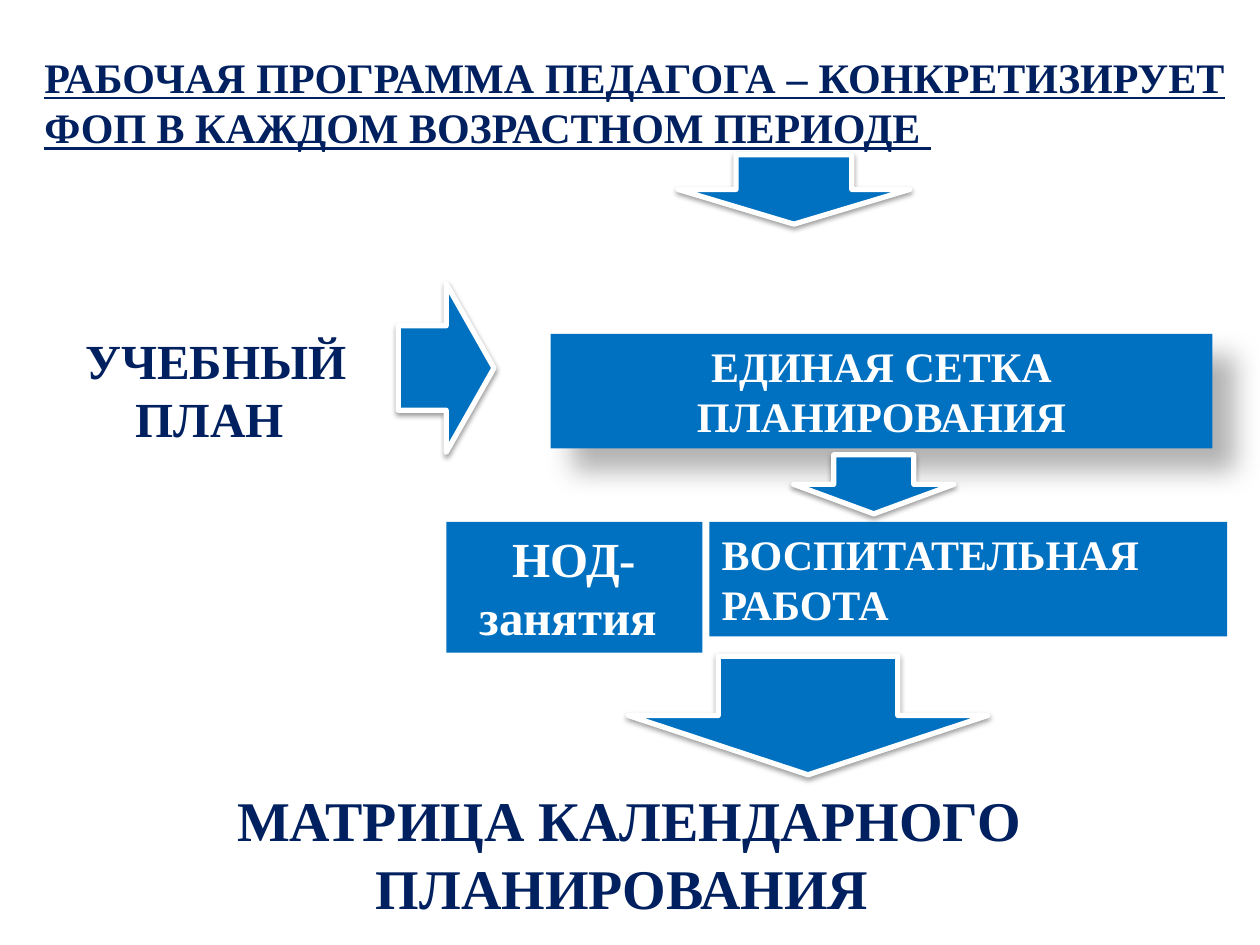
from lxml import etree
from pptx import Presentation
from pptx.dml.color import RGBColor
from pptx.enum.shapes import MSO_SHAPE
from pptx.enum.text import MSO_ANCHOR, MSO_AUTO_SIZE, PP_ALIGN
from pptx.oxml.ns import qn
from pptx.util import Cm, Pt

RECTANGLE = MSO_SHAPE.RECTANGLE
RIGHT_ARROW = MSO_SHAPE.RIGHT_ARROW
DOWN_ARROW = MSO_SHAPE.DOWN_ARROW
LEFT = PP_ALIGN.LEFT
CENTER = PP_ALIGN.CENTER
JUSTIFY = PP_ALIGN.JUSTIFY
TOP = MSO_ANCHOR.TOP
NO_AUTOFIT = MSO_AUTO_SIZE.NONE
TITLE_ONLY = 5

COLORS = {"navy": "002060", "blue": "0070C0", "white": "FFFFFF", "black": "000000"}
ARROW_SHADOW = {"alpha": 38, "blur": 3.1, "distance": 1.6, "angle": 90}
BOX_SHADOW = {"alpha": 30, "blur": 15, "distance": 18, "angle": 45}


class PlanSlide:
    font_name = "Times New Roman"
    arrow_line = Pt(3)

    def __init__(self, presentation):
        self.slide = presentation.slides.add_slide(presentation.slide_layouts[TITLE_ONLY])

    def color(self, name):
        return RGBColor.from_string(COLORS[name])

    def add_text(self, shape, text, size, color, alignment, underline=False):
        frame = shape.text_frame
        frame.word_wrap = True
        frame.auto_size = NO_AUTOFIT
        frame.vertical_anchor = TOP
        paragraph = frame.paragraphs[0]
        paragraph.alignment = alignment
        run = paragraph.add_run()
        run.text = text
        run.font.name = self.font_name
        run.font.size = Pt(size)
        run.font.bold = True
        run.font.underline = underline
        run.font.color.rgb = self.color(color)

    def title(self, bounds, text, size):
        shape = self.slide.shapes.title
        shape.left, shape.top, shape.width, shape.height = map(Cm, bounds)
        self.add_text(shape, text, size, "navy", JUSTIFY, underline=True)

    def label(self, bounds, text, size):
        shape = self.slide.shapes.add_textbox(*map(Cm, bounds))
        self.add_text(shape, text, size, "navy", CENTER)

    def filled_shape(self, kind, bounds):
        shape = self.slide.shapes.add_shape(kind, *map(Cm, bounds))
        shape.shadow.inherit = False
        shape.fill.solid()
        shape.fill.fore_color.rgb = self.color("blue")
        return shape

    def box(self, bounds, text, size, alignment=CENTER, shadow=None):
        shape = self.filled_shape(RECTANGLE, bounds)
        shape.line.fill.background()
        self.add_text(shape, text, size, "white", alignment)
        if shadow:
            self.cast_shadow(shape, **shadow)

    def arrow(self, kind, bounds):
        shape = self.filled_shape(kind, bounds)
        shape.line.color.rgb = self.color("white")
        shape.line.width = self.arrow_line
        self.cast_shadow(shape, **ARROW_SHADOW)

    def cast_shadow(self, shape, alpha, blur, distance, angle):
        effects = shape._element.spPr.find(qn("a:effectLst"))
        shadow = etree.SubElement(
            effects,
            qn("a:outerShdw"),
            blurRad=str(Pt(blur)),
            dist=str(Pt(distance)),
            dir=str(angle * 60000),
            algn="tl",
            rotWithShape="0",
        )
        color = etree.SubElement(shadow, qn("a:srgbClr"), val=COLORS["black"])
        etree.SubElement(color, qn("a:alpha"), val=str(alpha * 1000))


def main():
    presentation = Presentation()
    presentation.slide_width = Cm(25.4)
    presentation.slide_height = Cm(19.05)
    plan = PlanSlide(presentation)

    plan.title(
        (0.64, 0.91, 24.3, 2.31),
        "РАБОЧАЯ ПРОГРАММА ПЕДАГОГА – КОНКРЕТИЗИРУЕТ ФОП В КАЖДОМ ВОЗРАСТНОМ ПЕРИОДЕ ",
        24,
    )
    plan.label((0.97, 6.53, 6.76, 2.64), "УЧЕБНЫЙ ПЛАН ", 28)
    plan.label((1.6, 15.72, 22.17, 3), "МАТРИЦА КАЛЕНДАРНОГО ПЛАНИРОВАНИЯ ", 32)

    plan.box((11.1, 6.73, 13.34, 2.31), "ЕДИНАЯ СЕТКА ПЛАНИРОВАНИЯ", 24, shadow=BOX_SHADOW)
    plan.box((9, 10.52, 5.16, 2.64), "НОД-занятия ", 28)
    plan.box((14.3, 10.52, 10.44, 2.31), "ВОСПИТАТЕЛЬНАЯ РАБОТА", 24, alignment=LEFT)

    plan.arrow(RIGHT_ARROW, (8.03, 5.72, 1.93, 3.4))
    for bounds in (
        (13.67, 3.12, 4.67, 1.4),
        (16, 9.17, 3.23, 1.19),
        (12.67, 13.23, 7.24, 2.39),
    ):
        plan.arrow(DOWN_ARROW, bounds)

    presentation.save("out.pptx")


if __name__ == "__main__":
    main()
